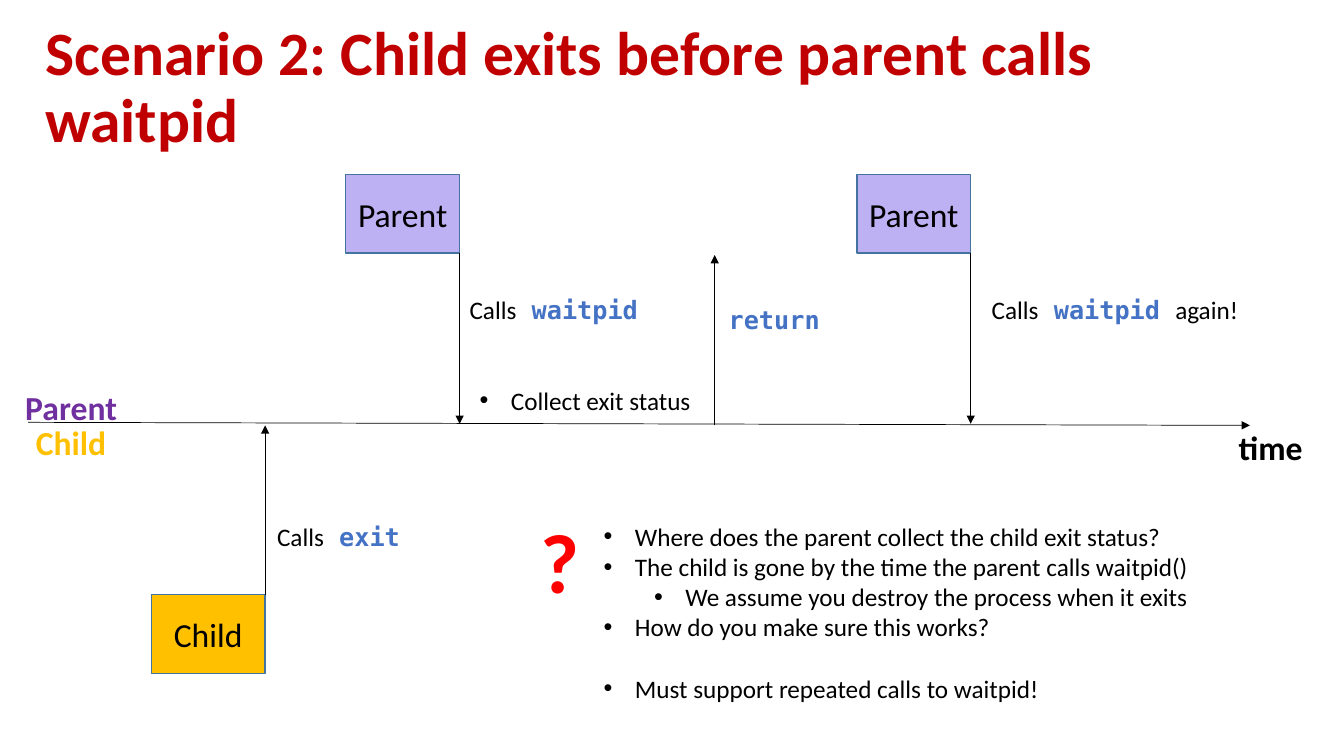
from lxml.etree import SubElement
from pptx import Presentation
from pptx.dml.color import RGBColor
from pptx.enum.shapes import MSO_CONNECTOR, MSO_SHAPE
from pptx.enum.text import MSO_ANCHOR, PP_ALIGN
from pptx.oxml.ns import qn
from pptx.util import Inches, Pt

COLORS = {
    "title": "C00000", "black": "000000", "code": "4472C4", "parent_label": "7030A0",
    "child": "FFC000", "parent": "BEB1F3", "outline": "43739E", "question": "FF0000",
}
COLUMNS, ROWS = 40, 30
ACTOR_WIDTH, ACTOR_HEIGHT = 3.39, 3.12
PARENT_TOP, CHILD_TOP = 6.92, 23.6
AXIS_START, AXIS_END = 16.76, 16.88
CALL_TOP, NOTE_TOP, LINE_HEIGHT = 11.48, 20.48, 1.6


class TimelineSlide:
    """Draws timeline elements on a slide grid of 40 columns by 30 rows."""

    def __init__(self, presentation):
        self.width = presentation.slide_width
        self.height = presentation.slide_height
        self.slide = presentation.slides.add_slide(presentation.slide_layouts[6])
        self.font, self.code_font = "Calibri", "DejaVu Sans Mono"

    def place(self, column, row):
        return round(column * self.width / COLUMNS), round(row * self.height / ROWS)

    def color(self, name):
        return RGBColor.from_string(COLORS[name])

    def run(self, paragraph, text, size=18, color="black", bold=False, font=None):
        run = paragraph.add_run()
        run.text = text
        run.font.name = font or self.font
        run.font.size = Pt(size)
        run.font.bold = bold
        run.font.color.rgb = self.color(color)

    def code(self, paragraph, text):
        self.run(paragraph, text, color="code", bold=True, font=self.code_font)

    def frame(self, column, row, columns, rows, wrap=True):
        box = self.slide.shapes.add_textbox(*self.place(column, row), *self.place(columns, rows))
        box.text_frame.word_wrap = wrap
        return box.text_frame

    def title(self, text):
        frame = self.frame(1.05, 0.64, 36.75, 5.8)
        frame.vertical_anchor = MSO_ANCHOR.MIDDLE
        paragraph = frame.paragraphs[0]
        paragraph.line_spacing = 0.9
        self.run(paragraph, text, 44, "title", True)

    def label(self, text, column, row, color, columns=ACTOR_WIDTH, rows=2, size=24):
        paragraph = self.frame(column, row, columns, rows).paragraphs[0]
        paragraph.alignment = PP_ALIGN.CENTER
        self.run(paragraph, text, size, color, True)

    def call(self, column, row, columns, before="", code="", after=""):
        paragraph = self.frame(column, row, columns, LINE_HEIGHT, False).paragraphs[0]
        if before:
            self.run(paragraph, before)
        self.code(paragraph, code)
        if after:
            self.run(paragraph, after)

    def bullets(self, items, column, row, columns, rows, wrap=True):
        frame = self.frame(column, row, columns, rows, wrap)
        for index, (text, level, gap) in enumerate(items):
            paragraph = frame.add_paragraph() if index else frame.paragraphs[0]
            paragraph.level = level
            paragraph.space_before = Pt(gap)
            properties = paragraph._p.get_or_add_pPr()
            properties.set("marL", str(Inches(0.31 + 0.5 * level)))
            properties.set("indent", str(Inches(-0.31)))
            SubElement(properties, qn("a:buFont")).set("typeface", "Arial")
            SubElement(properties, qn("a:buChar")).set("char", "•")
            self.run(paragraph, text)

    def arrow(self, start, end):
        connector = self.slide.shapes.add_connector(
            MSO_CONNECTOR.STRAIGHT, *self.place(*start), *self.place(*end))
        connector.line.width = Pt(0.5)
        connector.line.color.rgb = self.color("black")
        SubElement(connector.line._get_or_add_ln(), qn("a:tailEnd")).set("type", "triangle")
        SubElement(connector._element.spPr, qn("a:effectLst"))

    def actor(self, text, column, row, fill, arrow_start, arrow_end):
        shape = self.slide.shapes.add_shape(
            MSO_SHAPE.RECTANGLE, *self.place(column, row), *self.place(ACTOR_WIDTH, ACTOR_HEIGHT))
        shape.shadow.inherit = False
        shape.fill.solid()
        shape.fill.fore_color.rgb = self.color(fill)
        shape.line.color.rgb = self.color("outline")
        shape.line.width = Pt(1)
        shape.text_frame.vertical_anchor = MSO_ANCHOR.MIDDLE
        paragraph = shape.text_frame.paragraphs[0]
        paragraph.alignment = PP_ALIGN.CENTER
        self.run(paragraph, text, 24)
        edge = column + ACTOR_WIDTH
        self.arrow((edge, arrow_start), (edge, arrow_end))


def main():
    presentation = Presentation()
    presentation.slide_width, presentation.slide_height = Inches(13.33), Inches(7.5)
    timeline = TimelineSlide(presentation)

    timeline.title("Scenario 2: Child exits before parent calls waitpid")
    timeline.arrow((0.84, AXIS_START), (37.2, AXIS_END))
    timeline.label("time", 36.12, 16.76, "black")
    timeline.label("Parent", 0.42, 15.16, "parent_label")
    timeline.label("Child", 0.42, 16.56, "child")

    parent_bottom = PARENT_TOP + ACTOR_HEIGHT
    for column in (10.29, 25.5):
        timeline.actor("Parent", column, PARENT_TOP, "parent", parent_bottom, 16.82)
    timeline.actor("Child", 4.5, CHILD_TOP, "child", CHILD_TOP, AXIS_END)
    timeline.arrow((21.27, AXIS_END), (21.27, 10.12))

    timeline.call(13.68, CALL_TOP, 5.64, "Calls", " waitpid")
    timeline.call(29.22, CALL_TOP, 7.98, "Calls", " waitpid ", "again!")
    timeline.call(7.95, NOTE_TOP, 4.29, "Calls", " exit")
    timeline.call(21.39, 11.88, 3.33, code="return")

    timeline.bullets([("Collect exit status", 0, 0)], 13.98, 15.08, 6.96, LINE_HEIGHT, False)
    timeline.label("?", 15.06, 20.04, "question", 3.21, 4.44, 60)
    timeline.bullets([
        ("Where does the parent collect the child exit status?", 0, 0),
        ("The child is gone by the time the parent calls waitpid()", 0, 0),
        ("We assume you destroy the process when it exits", 1, 0),
        ("How do you make sure this works?", 0, 0),
        ("Must support repeated calls to waitpid!", 0, 22),
    ], 17.67, NOTE_TOP, 18.45, 7.68)
    presentation.save("out.pptx")


if __name__ == "__main__":
    main()
